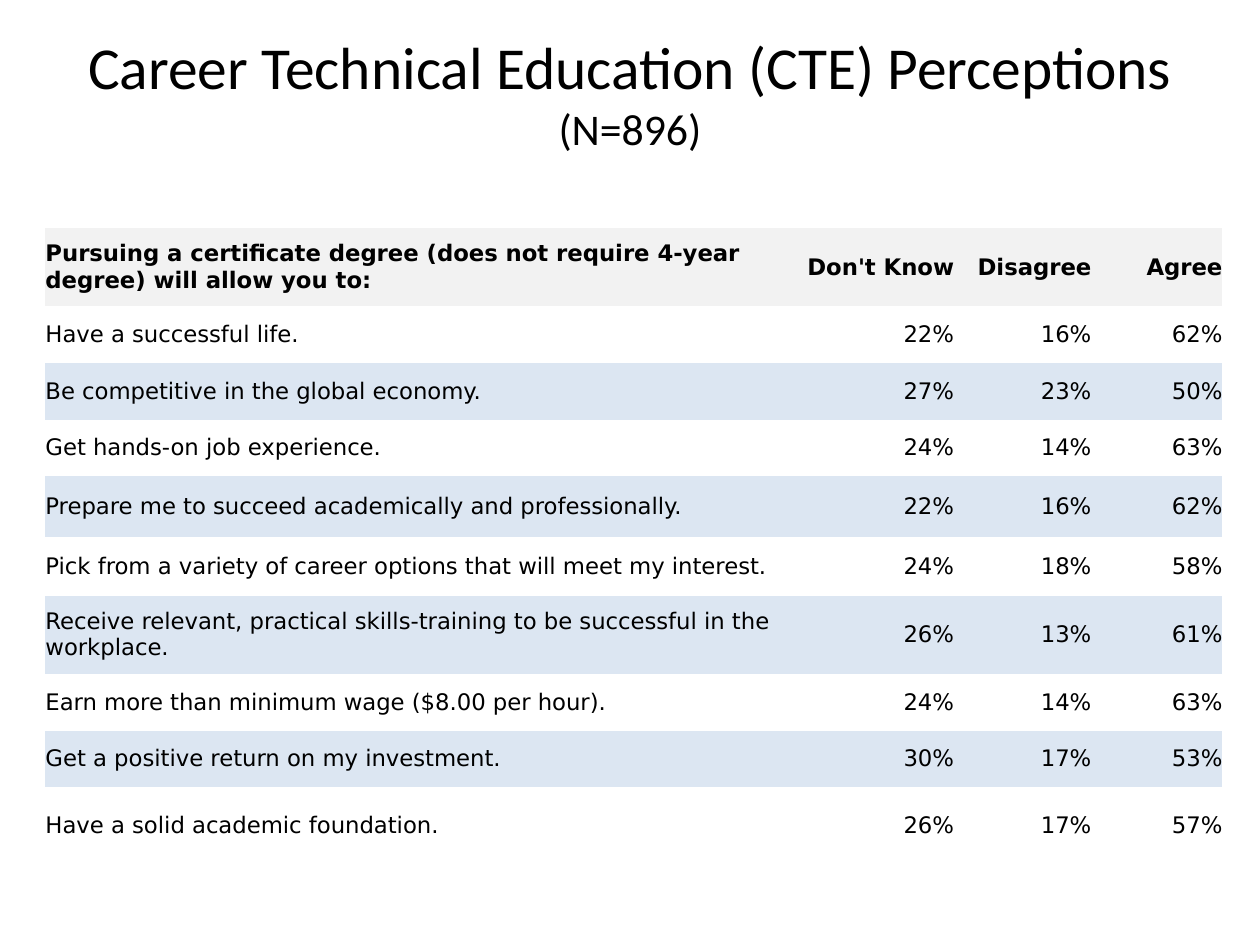
from dataclasses import dataclass

from pptx import Presentation
from pptx.dml.color import RGBColor
from pptx.enum.text import MSO_ANCHOR, PP_ALIGN
from pptx.util import Pt

MIDDLE = MSO_ANCHOR.MIDDLE
LEFT, CENTER, RIGHT = PP_ALIGN.LEFT, PP_ALIGN.CENTER, PP_ALIGN.RIGHT
PLAIN_STYLE = "{2D5ABB26-0587-4C30-8999-92F81FD0307C}"


@dataclass(frozen=True)
class Theme:
    """Colours, fonts and type sizes of the slide."""
    text: RGBColor = RGBColor(0x00, 0x00, 0x00)
    header: RGBColor = RGBColor(0xF2, 0xF2, 0xF2)
    band: RGBColor = RGBColor(0xDC, 0xE6, 0xF2)
    title_font: str = "Calibri"
    table_font: str = "DejaVu Sans"
    title_size: int = 34
    subtitle_size: int = 25
    table_size: int = 13


THEME = Theme()
TITLE = "Career Technical Education (CTE) Perceptions"
SAMPLE = "(N=896)"
HEADER = ("Pursuing a certificate degree (does not require 4-year degree) "
          "will allow you to:", "Don't Know", "Disagree", "Agree")
ANSWERS = [
    ("Have a successful life.", 22, 16, 62),
    ("Be competitive in the global economy.", 27, 23, 50),
    ("Get hands-on job experience.", 24, 14, 63),
    ("Prepare me to succeed academically and professionally.", 22, 16, 62),
    ("Pick from a variety of career options that will meet my interest.",
     24, 18, 58),
    ("Receive relevant, practical skills-training to be successful in the "
     "workplace.", 26, 13, 61),
    ("Earn more than minimum wage ($8.00 per hour).", 24, 14, 63),
    ("Get a positive return on my investment.", 30, 17, 53),
    ("Have a solid academic foundation.", 26, 17, 57),
]
COLUMN_WIDTHS = (432.7, 86.4, 78.5, 74.9)
ROW_HEIGHTS = (44.7, 32.4, 32.4, 32.4, 34.5, 33.8, 44.7, 32.4, 32.4, 43.2)


def set_all(target, **values):
    """Set several attributes on one object."""
    for name, value in values.items():
        setattr(target, name, value)


def add_run(p, text, font, size, bold=False):
    """Append a formatted run to a paragraph."""
    r = p.add_run()
    r.text = text
    set_all(r.font, name=font, size=Pt(size), bold=bold)
    r.font.color.rgb = THEME.text


def add_title(s, x, y, w, h):
    """Place the title and the sample size in the given box."""
    tf = s.shapes.add_textbox(Pt(x), Pt(y), Pt(w), Pt(h)).text_frame
    set_all(tf, word_wrap=True, vertical_anchor=MIDDLE,
            margin_top=Pt(9), margin_bottom=Pt(3.6))
    p = tf.paragraphs[0]
    p.alignment = CENTER
    add_run(p, TITLE, THEME.title_font, THEME.title_size)
    p.add_line_break()
    add_run(p, SAMPLE, THEME.title_font, THEME.subtitle_size)


def fill_cell(cell, text, row, column):
    """Write one cell, styled by its row and column."""
    set_all(cell, vertical_anchor=MIDDLE, margin_left=0, margin_right=0,
            margin_top=0, margin_bottom=0)
    if row % 2 and row:
        cell.fill.background()
    else:
        cell.fill.solid()
        cell.fill.fore_color.rgb = THEME.band if row else THEME.header
    p = cell.text_frame.paragraphs[0]
    p.alignment = RIGHT if column else LEFT
    add_run(p, text, THEME.table_font, THEME.table_size, bold=row == 0)


def add_answers(s, x, y, w, h):
    """Place the table of answers in the given box."""
    rows = [HEADER] + [(label, *(f"{v}%" for v in values))
                       for label, *values in ANSWERS]
    table = s.shapes.add_table(len(rows), len(HEADER),
                               Pt(x), Pt(y), Pt(w), Pt(h)).table
    set_all(table, first_row=False, horz_banding=False)
    table._tbl.tblPr[0].text = PLAIN_STYLE
    for column, width in zip(table.columns, COLUMN_WIDTHS):
        column.width = Pt(width)
    for row, height in zip(table.rows, ROW_HEIGHTS):
        row.height = Pt(height)
    for i, texts in enumerate(rows):
        for j, text in enumerate(texts):
            fill_cell(table.cell(i, j), text, i, j)


def main():
    """Build and save the slide."""
    prs = Presentation()
    set_all(prs, slide_width=Pt(720), slide_height=Pt(540))
    s = prs.slides.add_slide(prs.slide_layouts[6])
    add_title(s, 36, 21.6, 648, 56.9)
    add_answers(s, 26, 130.3, sum(COLUMN_WIDTHS), sum(ROW_HEIGHTS))
    prs.save("out.pptx")


if __name__ == "__main__":
    main()
